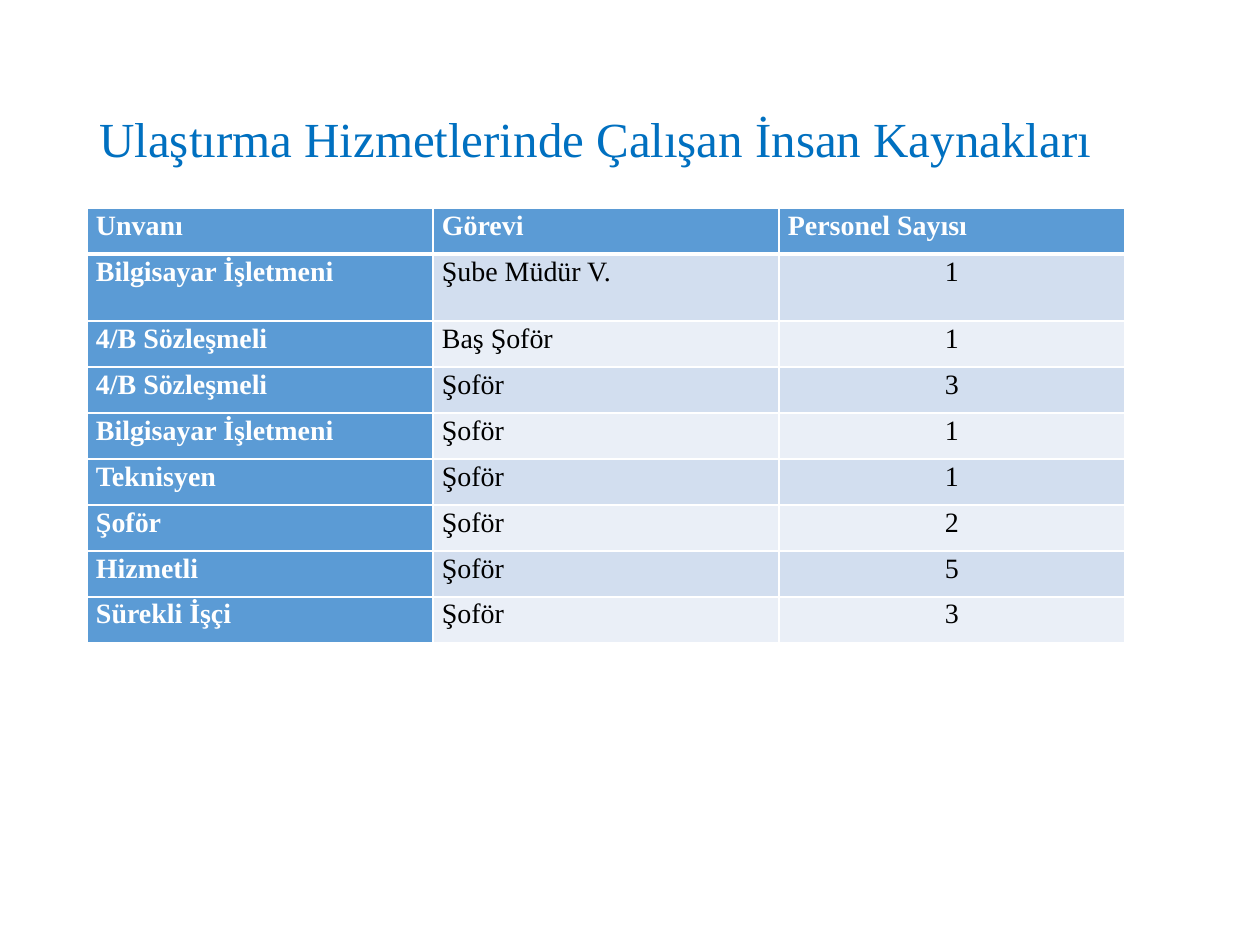
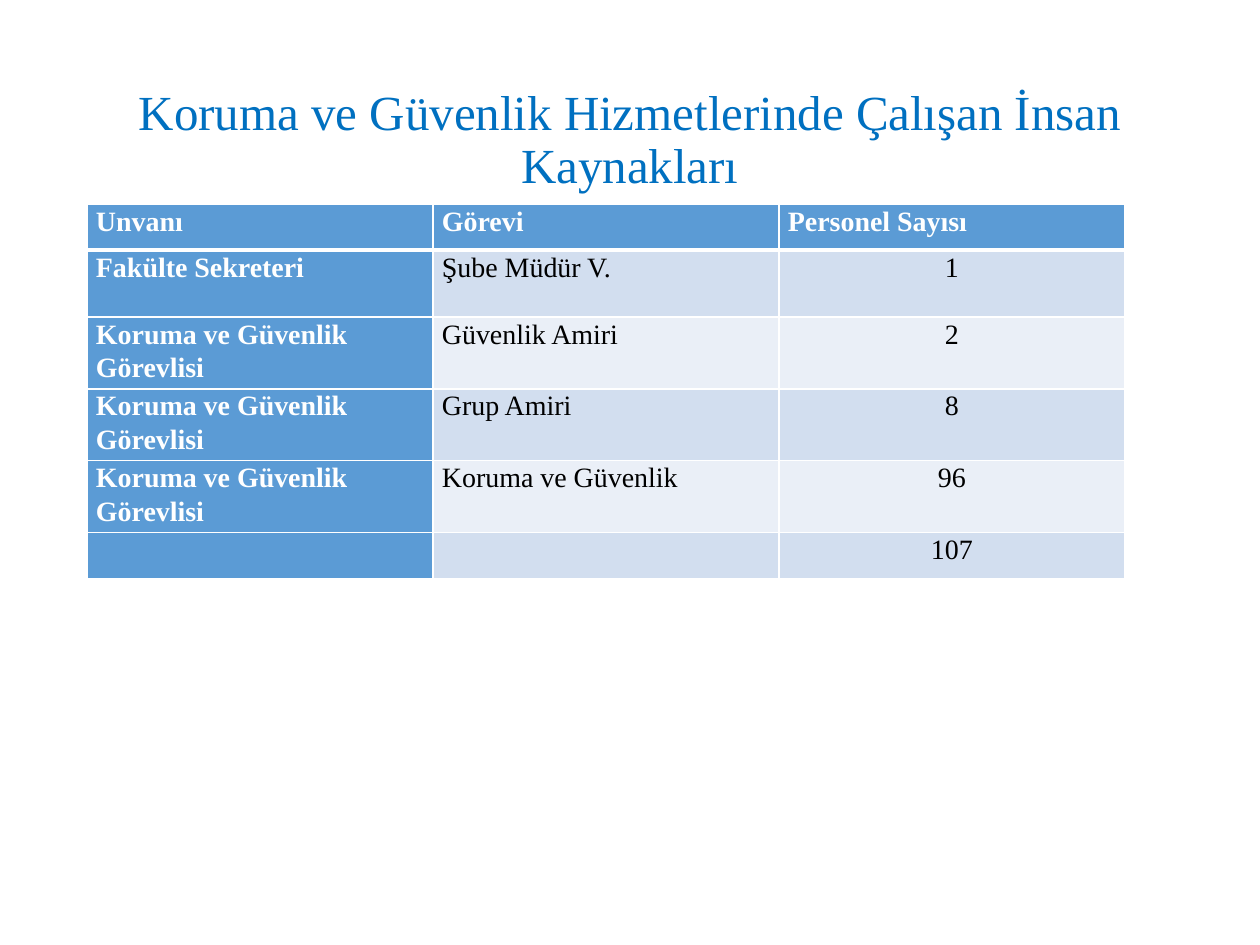
from lxml.etree import SubElement
from pptx import Presentation
from pptx.dml.color import RGBColor
from pptx.enum.text import MSO_ANCHOR as Anchor, PP_ALIGN as Align
from pptx.oxml.ns import qn
from pptx.util import Pt

PX = 914400 // 126
FONT = "Times New Roman"
TITLE_BLUE = RGBColor(0x00, 0x70, 0xC0)
HEADER_BLUE = RGBColor(0x5B, 0x9B, 0xD5)
BAND_DARK = RGBColor(0xD2, 0xDE, 0xEF)
BAND_LIGHT = RGBColor(0xEA, 0xEF, 0xF7)
WHITE = RGBColor(0xFF, 0xFF, 0xFF)
BLACK = RGBColor(0x00, 0x00, 0x00)

LEFT = 87
COL_W = 346
ROW_H, TALL_ROW_H = 46, 67
CELL_INSET = 9
HEADINGS = ("Unvanı", "Görevi", "Personel Sayısı")

GUARD = "Koruma ve Güvenlik Görevlisi"
TRANSPORT_STAFF = [
    ("Bilgisayar İşletmeni", "Şube Müdür V.", "1"),
    ("4/B Sözleşmeli", "Baş Şoför", "1"),
    ("4/B Sözleşmeli", "Şoför", "3"),
    ("Bilgisayar İşletmeni", "Şoför", "1"),
    ("Teknisyen", "Şoför", "1"),
    ("Şoför", "Şoför", "2"),
    ("Hizmetli", "Şoför", "5"),
    ("Sürekli İşçi", "Şoför", "3"),
]
SECURITY_STAFF = [
    ("Fakülte Sekreteri", "Şube Müdür V.", "1"),
    (GUARD, "Güvenlik Amiri", "2"),
    (GUARD, "Grup Amiri", "8"),
    (GUARD, "Koruma ve Güvenlik", "96"),
    ("", "", "107"),
]


def px(n):
    return n * PX


def write(p, text, size, color, bold=False, align=Align.LEFT, spacing=1.0):
    p.alignment = align
    p.line_spacing = spacing
    r = p.add_run()
    r.text = text
    r.font.name = FONT
    r.font.size = Pt(size)
    r.font.bold = bold
    r.font.color.rgb = color


def add_title(s, text, align):
    tf = s.shapes.add_textbox(px(LEFT), px(50), px(1086), px(183)).text_frame
    tf.word_wrap = True
    tf.vertical_anchor = Anchor.MIDDLE
    write(tf.paragraphs[0], text, 28, TITLE_BLUE, align=align, spacing=0.9)


def set_borders(cell, top, bottom):
    """Draw white cell borders; top and bottom are widths in points."""
    tc_pr = cell._tc.get_or_add_tcPr()
    for side, width in (("L", 1), ("R", 1), ("T", top), ("B", bottom)):
        ln = SubElement(tc_pr, qn(f"a:ln{side}"), w=str(Pt(width)))
        fill = SubElement(ln, qn("a:solidFill"))
        SubElement(fill, qn("a:srgbClr"), val=str(WHITE))


def fill_cell(cell, text, row, col):
    is_header = row == 0
    strong = is_header or col == 0
    set_borders(cell, top=3 if row == 1 else 1, bottom=3 if is_header else 1)
    cell.fill.solid()
    band = BAND_DARK if row % 2 else BAND_LIGHT
    cell.fill.fore_color.rgb = HEADER_BLUE if strong else band
    cell.margin_left = cell.margin_right = px(CELL_INSET)
    cell.margin_top = cell.margin_bottom = 0
    if text:
        centred = col == 2 and not is_header
        write(cell.text_frame.paragraphs[0], text, 16,
              WHITE if strong else BLACK, bold=strong,
              align=Align.CENTER if centred else Align.LEFT, spacing=1.07)


def add_staff_table(s, top, staff):
    rows = [HEADINGS, *staff]
    heights = [TALL_ROW_H if i == 1 or row[0] == GUARD else ROW_H
               for i, row in enumerate(rows)]
    cols = len(HEADINGS)
    table = s.shapes.add_table(len(rows), cols, px(LEFT), px(top),
                               px(cols * COL_W), px(sum(heights))).table
    for column in table.columns:
        column.width = px(COL_W)
    for i, (row, height) in enumerate(zip(rows, heights)):
        table.rows[i].height = px(height)
        for j, text in enumerate(row):
            fill_cell(table.cell(i, j), text, i, j)


def add_staff_slide(prs, title, align, table_top, staff):
    s = prs.slides.add_slide(prs.slide_layouts[6])
    add_title(s, title, align)
    add_staff_table(s, table_top, staff)


def main():
    prs = Presentation()
    prs.slide_width, prs.slide_height = px(1260), px(945)
    add_staff_slide(prs, "Ulaştırma Hizmetlerinde Çalışan İnsan Kaynakları",
                    Align.LEFT, 208, TRANSPORT_STAFF)
    add_staff_slide(prs, "Koruma ve Güvenlik Hizmetlerinde Çalışan İnsan Kaynakları",
                    Align.CENTER, 204, SECURITY_STAFF)
    prs.save("out.pptx")


if __name__ == "__main__":
    main()
